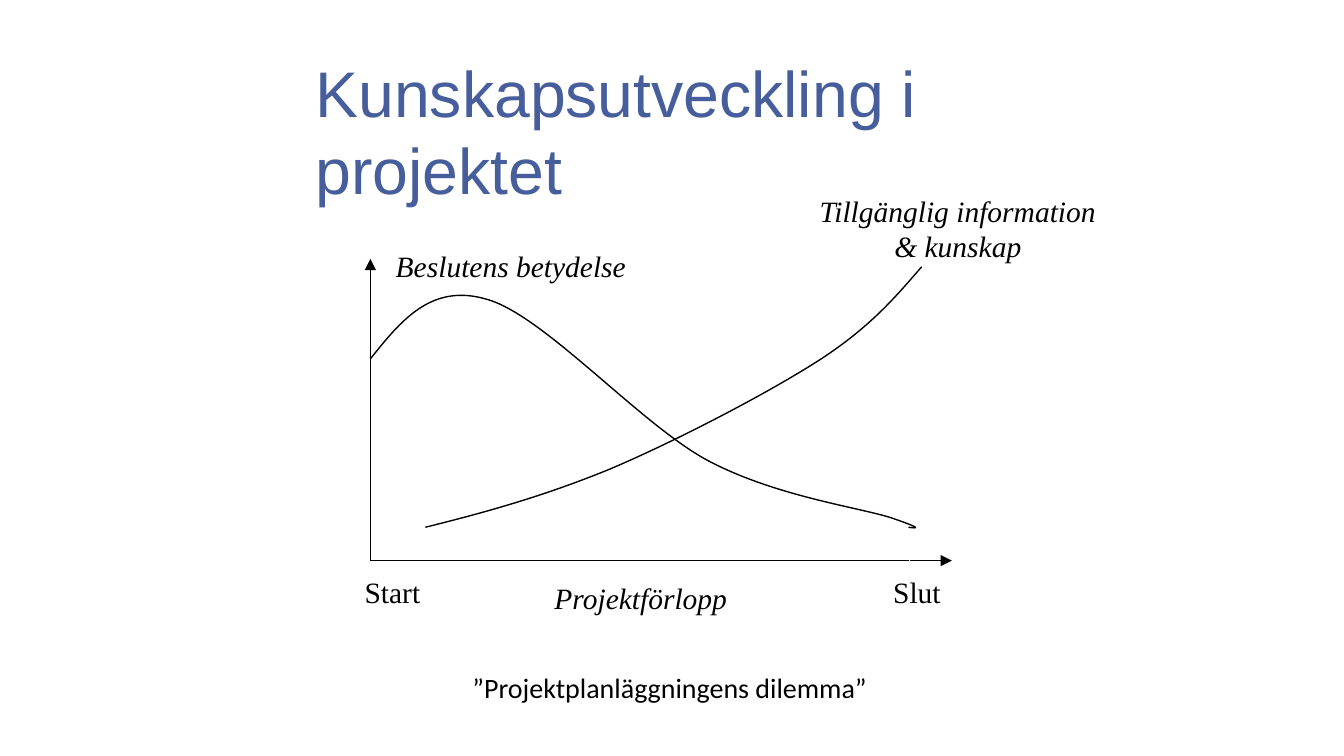
from lxml import etree
from pptx import Presentation
from pptx.dml.color import RGBColor
from pptx.enum.shapes import MSO_CONNECTOR
from pptx.enum.text import MSO_ANCHOR, MSO_AUTO_SIZE, PP_ALIGN
from pptx.oxml.ns import qn
from pptx.util import Cm, Pt

BLACK = RGBColor(0x00, 0x00, 0x00)
TITLE_BLUE = RGBColor(0x46, 0x5E, 0x9C)
LINE_WIDTH = Pt(0.75)


def bend_segments(freeform):
    """Turn every three straight segments into one cubic curve."""
    outline = freeform._element.find(".//" + qn("a:path"))
    segments = outline.findall(qn("a:lnTo"))
    for first in range(0, len(segments), 3):
        cubic = etree.SubElement(outline, qn("a:cubicBezTo"))
        for segment in segments[first:first + 3]:
            cubic.append(segment[0])
            outline.remove(segment)


prs = Presentation()
prs.slide_width, prs.slide_height = Cm(25.4), Cm(14.28)
slide = prs.slides.add_slide(prs.slide_layouts[5])

title = slide.shapes.title
title.left, title.top, title.width, title.height = Cm(5.71), Cm(1.27), Cm(13.82), Cm(2.39)
title.text_frame.text = "Kunskapsutveckling i projektet"
title.text_frame.word_wrap = True
title.text_frame.auto_size = MSO_AUTO_SIZE.NONE
title.text_frame.vertical_anchor = MSO_ANCHOR.MIDDLE
heading = title.text_frame.paragraphs[0]
heading.alignment = PP_ALIGN.LEFT
heading.font.name = "Arial"
heading.font.size = Pt(34.5)
heading.font.color.rgb = TITLE_BLUE

# Axes: a plain stretch followed by an arrow stretch
ORIGIN_X, ORIGIN_Y = 7, 10.59
axes = [
    (ORIGIN_X, 5.49, ORIGIN_X, 10.57, False),
    (ORIGIN_X, ORIGIN_Y, 17.17, ORIGIN_Y, False),
    (ORIGIN_X, 5.54, ORIGIN_X, 4.89, True),
    (17.19, ORIGIN_Y, 17.99, ORIGIN_Y, True),
]
for x1, y1, x2, y2, has_arrow in axes:
    axis = slide.shapes.add_connector(
        MSO_CONNECTOR.STRAIGHT, Cm(x1), Cm(y1), Cm(x2), Cm(y2))
    axis.line.color.rgb = BLACK
    axis.line.width = LINE_WIDTH
    if has_arrow:
        etree.SubElement(axis.line._get_or_add_ln(), qn("a:tailEnd"), type="triangle")
    etree.SubElement(axis._element.spPr, qn("a:effectLst"))

# Start point, then two control points and an end point per curve segment
decision_weight = [
    (7, 6.78), (7.57, 6.07), (8.15, 5.33), (9.22, 5.66),
    (10.29, 5.97), (12.09, 8), (13.36, 8.69),
    (14.63, 9.37), (16.21, 9.58), (16.84, 9.78),
    (17.48, 10), (17.32, 9.98), (17.17, 9.96),
]
knowledge = [
    (8.04, 9.96), (9.17, 9.68), (10.29, 9.37), (11.53, 8.86),
    (12.78, 8.33), (14.53, 7.42), (15.52, 6.78),
    (16.48, 6.15), (16.94, 5.59), (17.42, 5.04),
]
for controls in (decision_weight, knowledge):
    start, *rest = [(Cm(x), Cm(y)) for x, y in controls]
    builder = slide.shapes.build_freeform(*start)
    builder.add_line_segments(rest, close=False)
    curve = builder.convert_to_shape()
    bend_segments(curve)
    curve.fill.background()
    curve.line.color.rgb = BLACK
    curve.line.width = LINE_WIDTH
    curve.shadow.inherit = False

SERIF = "Times New Roman"
labels = [
    ("Projektförlopp", 10.29, 10.86, 4.29, 0.86, SERIF, 15.8, True, PP_ALIGN.LEFT, True),
    ("Beslutens betydelse", 7.29, 4.59, 5.72, 0.86, SERIF, 15.8, True, PP_ALIGN.LEFT, True),
    ("Tillgänglig information & kunskap", 15.11, 3.54, 5.99, 1.55,
     SERIF, 15.8, True, PP_ALIGN.CENTER, True),
    ("Start", 6.7, 10.74, 2.06, 0.86, SERIF, 15.8, False, PP_ALIGN.LEFT, True),
    ("Slut", 16.69, 10.74, 2.39, 0.86, SERIF, 15.8, False, PP_ALIGN.LEFT, True),
    ("”Projektplanläggningens dilemma”", 8.74, 12.57, 8, 0.84,
     "Calibri", 15, False, PP_ALIGN.LEFT, False),
]
for text, left, top, width, height, font, size, italic, alignment, wraps in labels:
    frame = slide.shapes.add_textbox(Cm(left), Cm(top), Cm(width), Cm(height)).text_frame
    frame.word_wrap = wraps
    frame.auto_size = MSO_AUTO_SIZE.SHAPE_TO_FIT_TEXT
    frame.margin_left = frame.margin_right = Cm(0.19)
    frame.margin_top = frame.margin_bottom = Cm(0.1)
    frame.text = text
    label = frame.paragraphs[0]
    label.alignment = alignment
    label.font.name = font
    label.font.size = Pt(size)
    label.font.italic = italic
    label.font.color.rgb = BLACK

prs.save("out.pptx")
